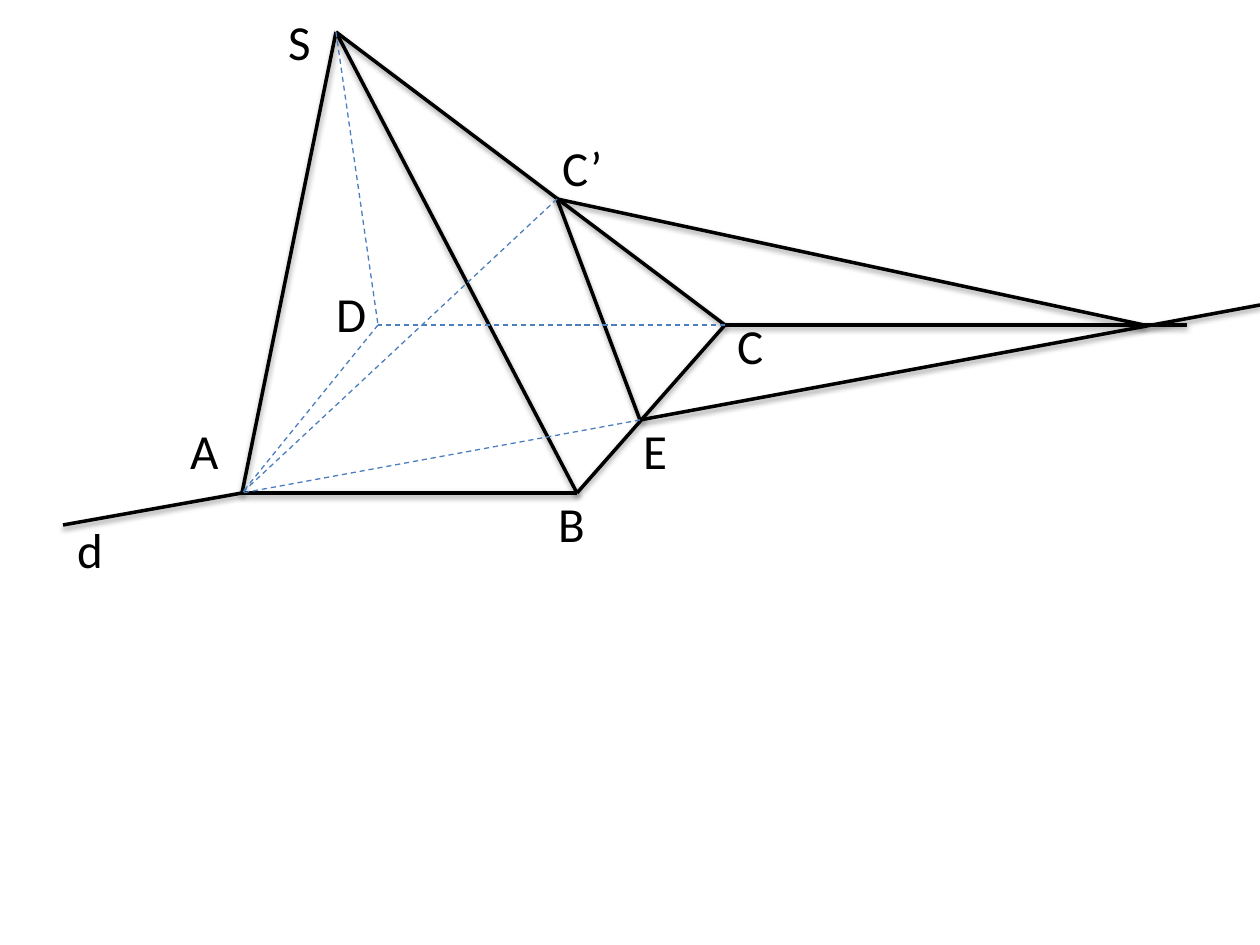
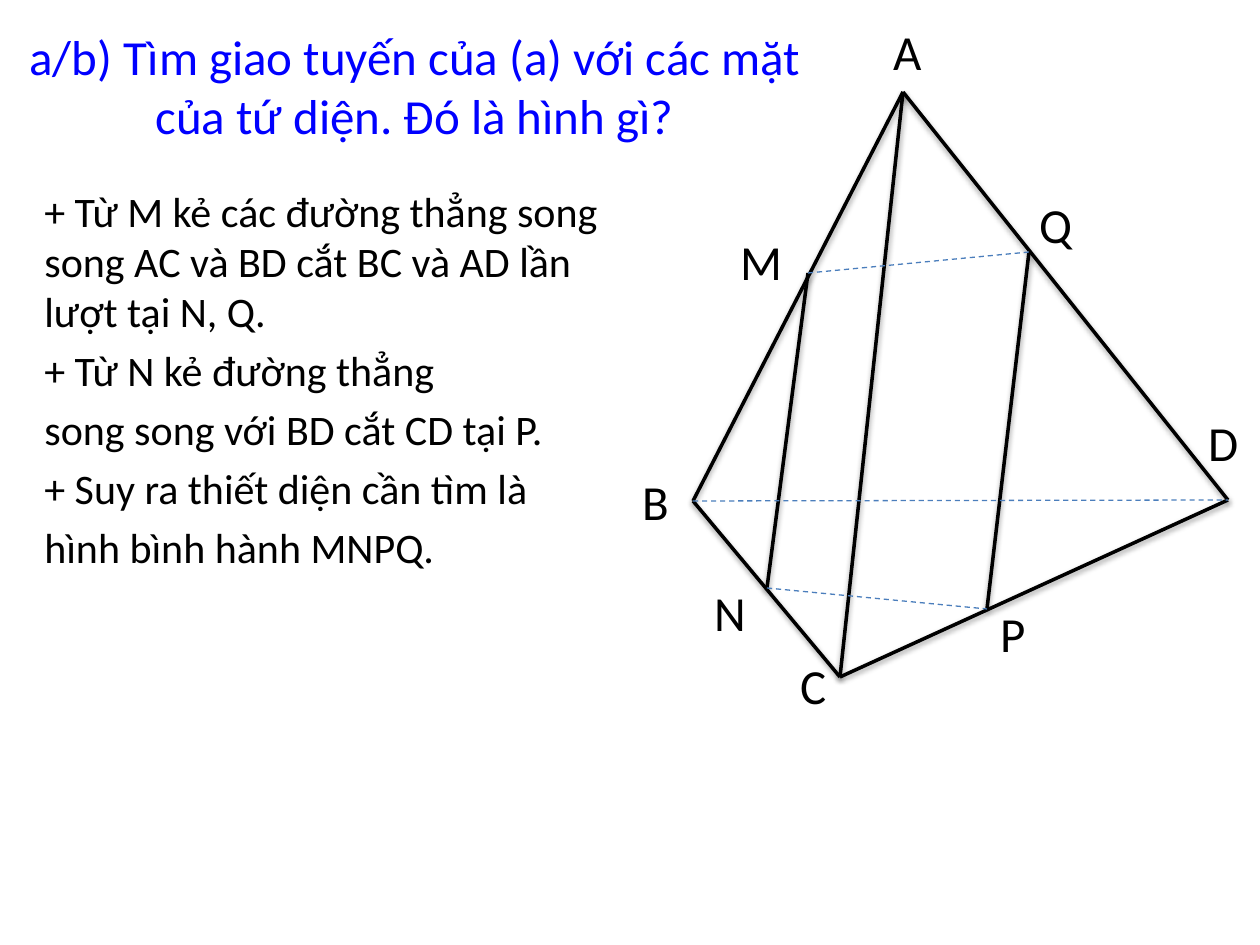
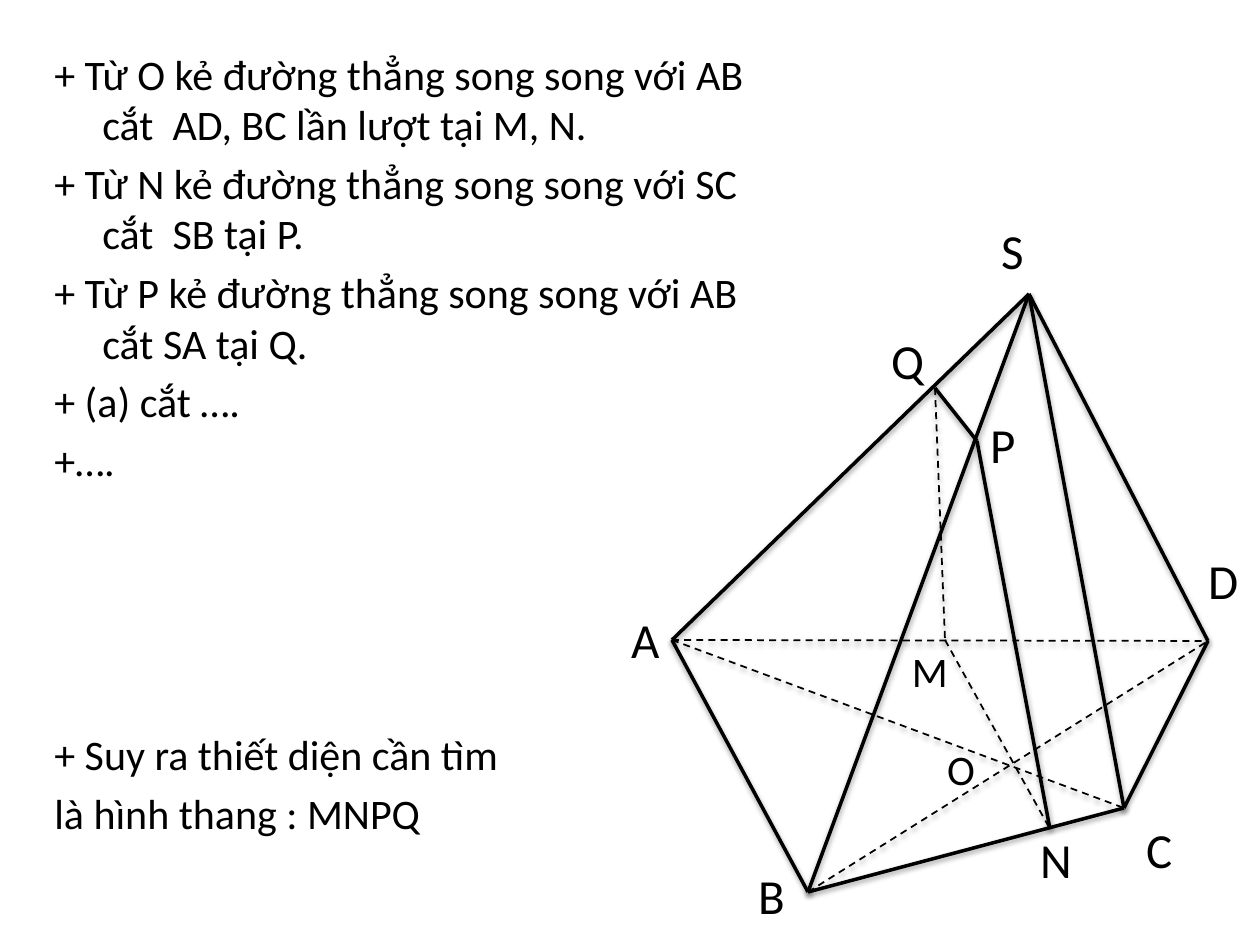
from lxml.etree import SubElement
from pptx import Presentation
from pptx.dml.color import RGBColor
from pptx.enum.dml import MSO_LINE
from pptx.enum.shapes import MSO_CONNECTOR
from pptx.enum.text import MSO_ANCHOR, PP_ALIGN
from pptx.oxml.ns import qn
from pptx.util import Pt

PX = 914400 / 126
FONT = "Calibri"
COLORS = {"ink": "000000", "hidden": "4B7EBC", "title": "0000FF"}
STROKES = {
    "solid": {"color": "ink", "shadow": True, "format": {"width": Pt(2)}},
    "hidden": {"color": "hidden", "shadow": False,
               "format": {"width": Pt(0.75), "dash_style": MSO_LINE.DASH}},
    "dashed": {"color": "ink", "shadow": True,
               "format": {"width": Pt(1), "dash_style": MSO_LINE.DASH}},
}
LABEL_SIZE = (116, 101)
HANGING = 48
LINE_GAP = 4.8


def px(n):
    return round(n * PX)


def apply(obj, values):
    for name, value in values.items():
        setattr(obj, name, value)


class Deck:
    """Holds the shared style and the slide being drawn."""

    def __init__(self):
        self.prs = Presentation()
        apply(self.prs, {"slide_width": px(1260), "slide_height": px(945)})
        self.slide = None

    def new_slide(self):
        self.slide = self.prs.slides.add_slide(self.prs.slide_layouts[6])

    def frame(self, box, anchor):
        sp = self.slide.shapes.add_textbox(*map(px, box))
        apply(sp.text_frame, {"word_wrap": True, "vertical_anchor": anchor})
        return sp.text_frame

    def add_text(self, p, text, size, color="ink"):
        r = p.add_run()
        r.text = text
        apply(r.font, {"name": FONT, "size": Pt(size)})
        r.font.color.rgb = RGBColor.from_string(COLORS[color])

    def centred(self, text, box, size=28, color="ink", anchor=MSO_ANCHOR.MIDDLE):
        p = self.frame(box, anchor).paragraphs[0]
        p.alignment = PP_ALIGN.CENTER
        self.add_text(p, text, size, color)

    def body(self, lines, box, flush_first=False, gaps=None):
        """Add hanging paragraphs; gaps maps a line number to its space before."""
        tf = self.frame(box, MSO_ANCHOR.TOP)
        for i, text in enumerate(lines):
            p = tf.add_paragraph() if i else tf.paragraphs[0]
            if i:
                p.space_before = Pt((gaps or {}).get(i, LINE_GAP))
            if i or not flush_first:
                ppr = p._p.get_or_add_pPr()
                ppr.set("marL", str(px(HANGING)))
                ppr.set("indent", str(-px(HANGING)))
            self.add_text(p, text, 24)

    def edge(self, start, end, stroke):
        style = STROKES[stroke]
        sp = self.slide.shapes.add_connector(
            MSO_CONNECTOR.STRAIGHT, *map(px, start + end))
        sp.line.color.rgb = RGBColor.from_string(COLORS[style["color"]])
        apply(sp.line, style["format"])
        effects = SubElement(sp._element.spPr, qn("a:effectLst"))
        if style["shadow"]:
            shadow = SubElement(effects, qn("a:outerShdw"), blurRad="40000",
                                dist="20000", dir="5400000", rotWithShape="0")
            clr = SubElement(shadow, qn("a:srgbClr"), val=COLORS["ink"])
            SubElement(clr, qn("a:alpha"), val="38000")

    def figure(self, points, edges, labels, small=()):
        """Join named points by "P-Q" edges of each stroke, then add the labels."""
        for stroke, pairs in edges.items():
            for pair in pairs.split():
                start, end = pair.split("-")
                self.edge(points[start], points[end], stroke)
        for name, corner in labels.items():
            self.centred(name, corner + LABEL_SIZE, 24 if name in small else 28)


def pyramid_with_line_d(deck):
    deck.new_slide()
    deck.figure(
        points={"S": (336, 32), "A": (242, 493), "B": (577, 493), "C": (725, 325),
                "D": (378, 325), "E": (640, 420), "C’": (557, 199),
                "meet": (1144, 325), "DC_end": (1187, 325),
                "d_left": (63, 525), "d_right": (1260, 305)},
        edges={"solid": "B-A S-A S-B S-C C-B d_right-E DC_end-C A-d_left "
                        "meet-C’ C’-E",
               "hidden": "S-D D-A C-D E-A C’-A"},
        labels={"A": (147, 399), "S": (242, -10), "D": (294, 262), "C": (693, 294),
                "B": (514, 472), "d": (32, 498), "E": (598, 399), "C’": (525, 116)},
    )


def tetrahedron_section(deck):
    deck.new_slide()
    deck.centred("a/b) Tìm giao tuyến của (a) với các mặt của tứ diện. Đó là hình gì?",
                 (10, 20, 809, 157), color="title", anchor=MSO_ANCHOR.TOP)
    deck.body(["+ Từ M kẻ các đường thẳng song song AC và BD cắt BC và AD lần "
               "lượt tại N, Q.",
               "+ Từ N kẻ đường thẳng",
               "song song với BD cắt CD tại P.",
               "+ Suy ra thiết diện cần tìm là",
               "hình bình hành MNPQ."],
              (32, 179, 630, 624), flush_first=True)
    deck.figure(
        points={"A": (903, 92), "B": (693, 501), "C": (840, 677), "D": (1228, 500),
                "M": (808, 273), "N": (767, 588), "P": (987, 609), "Q": (1029, 252)},
        edges={"solid": "A-B A-D B-C D-C A-C M-N Q-P", "hidden": "B-D M-Q N-P"},
        labels={"Q": (998, 173), "C": (756, 634), "B": (598, 450), "D": (1166, 391),
                "M": (703, 210), "A": (850, 0), "P": (955, 582), "N": (672, 561)},
    )


def pyramid_section(deck):
    deck.new_slide()
    deck.body(["+ Từ O kẻ đường thẳng song song với AB cắt  AD, BC lần lượt tại M, N.",
               "+ Từ N kẻ đường thẳng song song với SC cắt  SB tại P.",
               "+ Từ P kẻ đường thẳng song song với AB cắt SA tại Q.",
               "+ (a) cắt ….",
               "+….",
               "+ Suy ra thiết diện cần tìm",
               "là hình thang : MNPQ"],
              (42, 42, 756, 840), gaps={5: 139})
    deck.figure(
        points={"S": (1029, 294), "A": (672, 640), "B": (808, 892), "C": (1124, 808),
                "D": (1208, 641), "M": (945, 640), "N": (1050, 829),
                "P": (977, 441), "Q": (935, 388)},
        edges={"solid": "S-A S-B S-C S-D A-B B-C D-C P-N Q-P",
               "dashed": "A-D A-C B-D M-N Q-M"},
        labels={"S": (955, 199), "A": (588, 588), "N": (998, 808), "B": (714, 844),
                "D": (1166, 529), "O": (903, 718), "C": (1102, 798),
                "P": (945, 393), "Q": (850, 309), "M": (872, 620)},
        small=("O", "M"),
    )


def main():
    deck = Deck()
    for draw in (pyramid_with_line_d, tetrahedron_section, pyramid_section):
        draw(deck)
    deck.prs.save("out.pptx")


if __name__ == "__main__":
    main()
